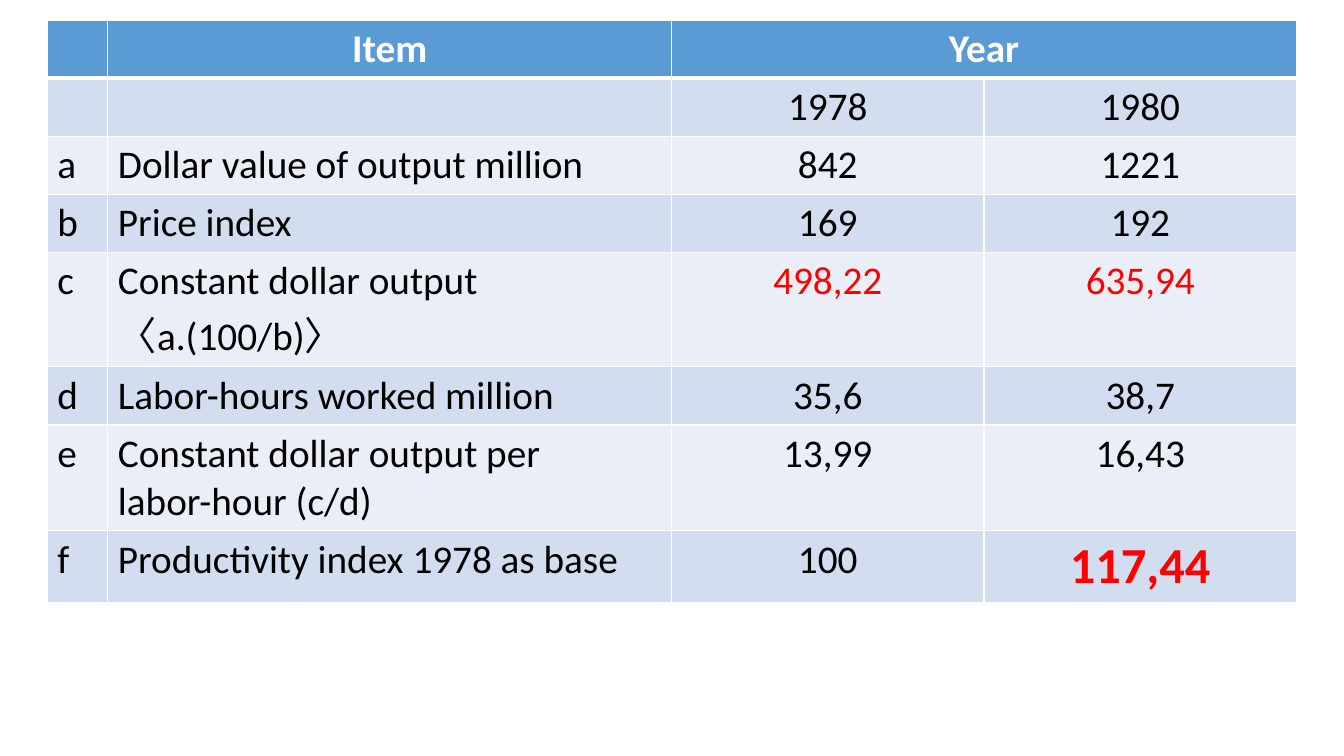
"""Build a slide with a productivity index table."""
from lxml.etree import SubElement
from pptx import Presentation
from pptx.dml.color import RGBColor
from pptx.enum.text import PP_ALIGN as Align
from pptx.oxml.ns import qn
from pptx.util import Inches, Pt

WHITE = RGBColor(0xFF, 0xFF, 0xFF)
BLACK = RGBColor(0x00, 0x00, 0x00)
RED = RGBColor(0xFF, 0x00, 0x00)
HEADER_BLUE = RGBColor(0x5B, 0x9B, 0xD5)
BANDS = (RGBColor(0xEA, 0xEF, 0xF7), RGBColor(0xD2, 0xDE, 0xEF))

COLUMN_WIDTHS = (0.6, 5.59, 3.1, 3.1)
ROW_HEIGHT = 0.41
ROWS = (
    ("", "Item", "Year", ""),
    ("", "", "1978", "1980"),
    ("a", "Dollar value of output million", "842", "1221"),
    ("b", "Price index", "169", "192"),
    ("c", "Constant dollar output\v〈a.(100/b)〉", "498,22", "635,94"),
    ("d", "Labor-hours worked million", "35,6", "38,7"),
    ("e", "Constant dollar output per\nlabor-hour (c/d)", "13,99", "16,43"),
    ("f", "Productivity index 1978 as base", "100", "117,44"),
)
RED_VALUES = ("498,22", "635,94", "117,44")
RESULT = "117,44"


class SlideBuilder:
    """Hold the text style and the current slide."""

    def __init__(self, page, font_name, font_size):
        """Remember the slide and its base font."""
        self.page = page
        self.font_name = font_name
        self.font_size = font_size

    def add_table(self, left, top, width, height):
        """Place the table and fill every cell."""
        frame = self.page.shapes.add_table(
            len(ROWS), len(COLUMN_WIDTHS),
            Inches(left), Inches(top), Inches(width), Inches(height))
        table = frame.table
        for column, column_width in zip(table.columns, COLUMN_WIDTHS):
            column.width = Inches(column_width)
        for row in table.rows:
            row.height = Inches(ROW_HEIGHT)
        frame.height = Inches(height)
        table.cell(0, 2).merge(table.cell(0, 3))
        for row_index, texts in enumerate(ROWS):
            for column_index, text in enumerate(texts):
                cell = table.cell(row_index, column_index)
                is_header = row_index == 0
                self.add_borders(cell, is_header)
                cell.fill.solid()
                cell.fill.fore_color.rgb = HEADER_BLUE if is_header else BANDS[row_index % 2]
                if text:
                    self.add_text(cell, text, is_header, is_header or column_index > 1)

    def add_borders(self, cell, is_header):
        """Draw white cell edges, with a heavier one below the header."""
        properties = cell._tc.get_or_add_tcPr()
        for side in "LRTB":
            width = Pt(3 if is_header and side == "B" else 1)
            line = SubElement(properties, qn(f"a:ln{side}"), w=str(width))
            fill = SubElement(line, qn("a:solidFill"))
            SubElement(fill, qn("a:srgbClr"), val=str(WHITE))

    def add_text(self, cell, text, is_header, centred):
        """Set the text of one cell in its style."""
        cell.text = text
        for para in cell.text_frame.paragraphs:
            para.alignment = Align.CENTER if centred else Align.LEFT
            font = para.font
            font.name = self.font_name
            font.size = Pt(36 if text == RESULT else self.font_size)
            font.bold = is_header or text == RESULT
            font.color.rgb = WHITE if is_header else RED if text in RED_VALUES else BLACK


def main():
    """Create and save the deck."""
    deck = Presentation()
    deck.slide_width = Inches(13.33)
    deck.slide_height = Inches(7.5)
    page = deck.slides.add_slide(deck.slide_layouts[6])
    SlideBuilder(page, "Calibri", 28).add_table(0.47, 0.2, 12.39, 5.6)
    deck.save("out.pptx")


if __name__ == "__main__":
    main()
